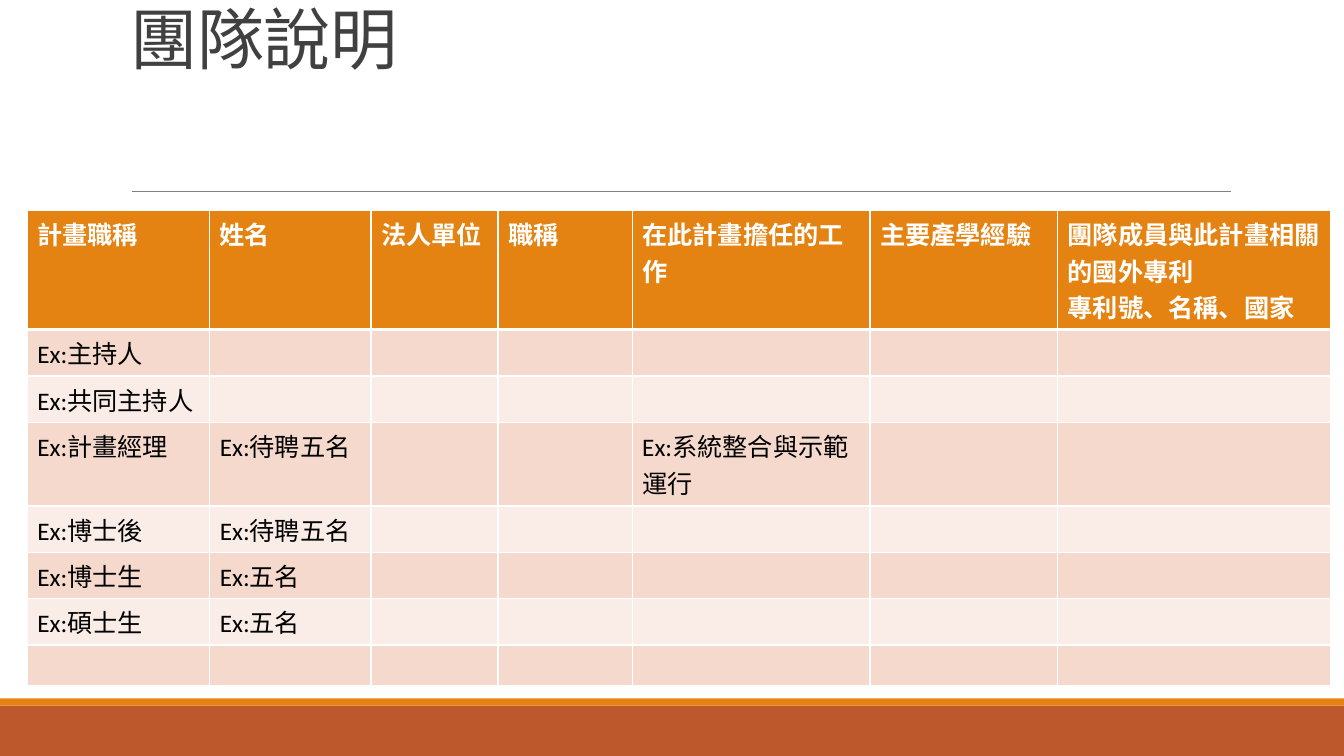
from lxml.etree import SubElement
from pptx import Presentation
from pptx.dml.color import RGBColor
from pptx.enum.shapes import MSO_CONNECTOR as Connector, MSO_SHAPE as Shape
from pptx.enum.text import MSO_ANCHOR as Anchor
from pptx.oxml.ns import qn
from pptx.util import Inches, Pt

WHITE = RGBColor(0xFF, 0xFF, 0xFF)
BLACK = RGBColor(0x00, 0x00, 0x00)
TITLE_GREY = RGBColor(0x40, 0x40, 0x40)
RULE_GREY = RGBColor(0x80, 0x80, 0x80)
ORANGE = RGBColor(0xE4, 0x83, 0x12)
RUST = RGBColor(0xBD, 0x58, 0x2C)
BANDS = (RGBColor(0xF5, 0xD9, 0xCC), RGBColor(0xFA, 0xED, 0xE7))

COLUMN_WIDTHS = (1.81, 1.6, 1.26, 1.33, 2.36, 1.86, 2.71)
HEADER_HEIGHT, ONE_LINE, TWO_LINES, EMPTY_ROW = 1.18, 0.46, 0.83, 0.4
HEADINGS = ("計畫職稱", "姓名", "法人單位", "職稱", "在此計畫擔任的工作", "主要產學經驗",
            "團隊成員與此計畫相關的國外專利\n專利號、名稱、國家")
TEAM_ROWS = (
    (HEADER_HEIGHT, dict(enumerate(HEADINGS))),
    (ONE_LINE, {0: "Ex:主持人"}),
    (ONE_LINE, {0: "Ex:共同主持人"}),
    (TWO_LINES, {0: "Ex:計畫經理", 1: "Ex:待聘五名", 4: "Ex:系統整合與示範運行"}),
    (ONE_LINE, {0: "Ex:博士後", 1: "Ex:待聘五名"}),
    (ONE_LINE, {0: "Ex:博士生", 1: "Ex:五名"}),
    (ONE_LINE, {0: "Ex:碩士生", 1: "Ex:五名"}),
    (EMPTY_ROW, {}),
)


class SlidePainter:
    font_name = "Calibri"

    def __init__(self, page):
        self.page = page

    def style_text(self, frame, size, color, bold=False):
        for para in frame.paragraphs:
            for span in para.runs:
                span.font.name = self.font_name
                span.font.size = Pt(size)
                span.font.bold = bold
                span.font.color.rgb = color

    def band(self, top, height, color):
        """Draw a full-width footer stripe."""
        stripe = self.page.shapes.add_shape(
            Shape.RECTANGLE, 0, Inches(top), Inches(13.33), Inches(height))
        stripe.shadow.inherit = False
        stripe.fill.solid()
        stripe.fill.fore_color.rgb = color
        stripe.line.fill.background()

    def rule(self, left, right, top):
        line = self.page.shapes.add_connector(
            Connector.STRAIGHT, Inches(left), Inches(top), Inches(right), Inches(top))
        line.line.color.rgb = RULE_GREY
        line.line.width = Pt(0.5)
        SubElement(line._element.spPr, qn("a:effectLst"))

    def title(self, text, left, top, width, height):
        box = self.page.shapes.add_textbox(
            Inches(left), Inches(top), Inches(width), Inches(height))
        frame = box.text_frame
        frame.word_wrap = True
        frame.vertical_anchor = Anchor.BOTTOM
        frame.text = text
        self.style_text(frame, 48, TITLE_GREY)
        para = frame.paragraphs[0]
        para.line_spacing = 0.85
        para.runs[0].font._element.set("spc", "-50")

    def cell_borders(self, cell, top, bottom):
        """Edge a cell in white; top and bottom are widths in points."""
        properties = cell._tc.get_or_add_tcPr()
        for side, width in (("L", 1), ("R", 1), ("T", top), ("B", bottom)):
            edge = SubElement(properties, qn(f"a:ln{side}"), w=str(Pt(width)))
            fill = SubElement(edge, qn("a:solidFill"))
            SubElement(fill, qn("a:srgbClr"), val=str(WHITE))

    def team_table(self, left, top):
        total_height = sum(height for height, _ in TEAM_ROWS)
        table = self.page.shapes.add_table(
            len(TEAM_ROWS), len(HEADINGS), Inches(left), Inches(top),
            Inches(sum(COLUMN_WIDTHS)), Inches(total_height)).table
        for column, width in zip(table.columns, COLUMN_WIDTHS):
            column.width = Inches(width)
        for row_index, (height, texts) in enumerate(TEAM_ROWS):
            table.rows[row_index].height = Inches(height)
            is_header = row_index == 0
            for column_index in range(len(HEADINGS)):
                cell = table.cell(row_index, column_index)
                self.cell_borders(cell, top=3 if row_index == 1 else 1,
                                  bottom=3 if is_header else 1)
                cell.fill.solid()
                cell.fill.fore_color.rgb = ORANGE if is_header else BANDS[(row_index - 1) % 2]
                if column_index in texts:
                    cell.text_frame.text = texts[column_index]
                    self.style_text(cell.text_frame, 18,
                                    WHITE if is_header else BLACK, is_header)


def main():
    deck = Presentation()
    deck.slide_width = Inches(13.33)
    deck.slide_height = Inches(7.5)
    painter = SlidePainter(deck.slides.add_slide(deck.slide_layouts[6]))
    painter.band(7, 0.5, RUST)
    painter.band(6.93, 0.07, ORANGE)
    painter.rule(1.31, 12.21, 1.9)
    painter.title("團隊說明", 1.2, 0, 11, 0.82)
    painter.team_table(0.27, 2.09)
    deck.save("out.pptx")


if __name__ == "__main__":
    main()
